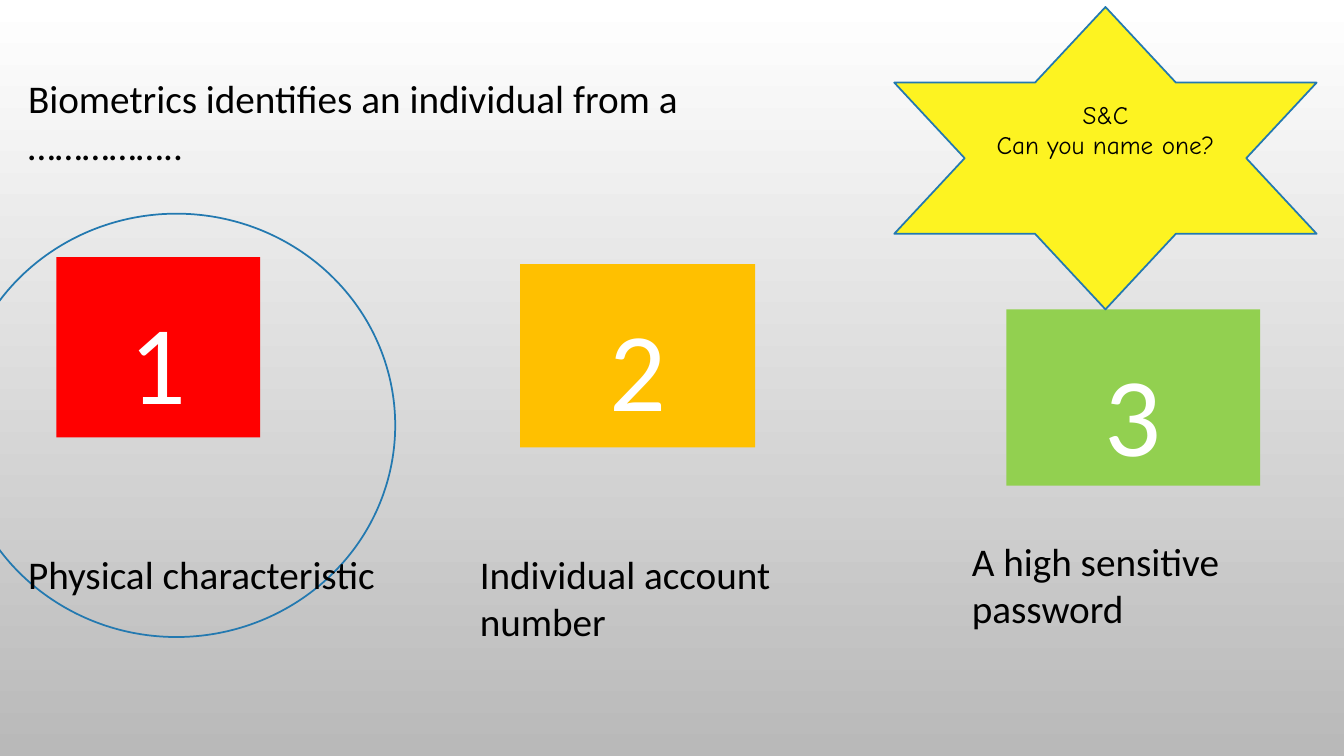
"""Build a quiz slide on biometrics with three numbered answers."""
from pptx import Presentation
from pptx.dml.color import RGBColor
from pptx.enum.shapes import MSO_SHAPE
from pptx.enum.text import MSO_ANCHOR, PP_ALIGN
from pptx.util import Inches, Pt

BLACK = RGBColor(0x00, 0x00, 0x00)
WHITE = RGBColor(0xFF, 0xFF, 0xFF)
GREY = RGBColor(0xB9, 0xB9, 0xB9)
RED = RGBColor(0xFF, 0x00, 0x00)
AMBER = RGBColor(0xFF, 0xC0, 0x00)
GREEN = RGBColor(0x92, 0xD0, 0x50)
YELLOW = RGBColor(0xFD, 0xF3, 0x21)
BLUE = RGBColor(0x23, 0x79, 0xB0)

deck = Presentation()
deck.slide_width, deck.slide_height = Inches(13.33), Inches(7.5)
slide = deck.slides.add_slide(deck.slide_layouts[6])

backdrop = slide.background.fill
backdrop.gradient()
backdrop.gradient_angle = 270
for stop, shade in zip(backdrop.gradient_stops, (WHITE, GREY)):
    stop.color.rgb = shade


def percent(left, top, width, height):
    """Turn percentages of the slide into lengths."""
    across, down = deck.slide_width / 100, deck.slide_height / 100
    return [int(n) for n in (left * across, top * down, width * across, height * down)]


def write(frame, text, size, color, font="Calibri", align=PP_ALIGN.LEFT):
    """Fill a text frame in one style."""
    frame.word_wrap = True
    frame.text = text
    for paragraph in frame.paragraphs:
        paragraph.alignment = align
        for run in paragraph.runs:
            run.font.name, run.font.size = font, Pt(size)
            run.font.color.rgb = color


answers = [
    ("1", RED, (4.2, 34, 15.15, 23.87)),
    ("2", AMBER, (38.71, 34.93, 17.48, 24.27)),
    ("3", GREEN, (74.87, 40.93, 18.9, 23.33)),
]
for number, color, area in answers:
    tile = slide.shapes.add_shape(MSO_SHAPE.RECTANGLE, *percent(*area))
    tile.shadow.inherit = False
    tile.fill.solid()
    tile.fill.fore_color.rgb = color
    tile.line.fill.background()
    tile.text_frame.vertical_anchor = MSO_ANCHOR.TOP
    tile.text_frame.margin_top = Inches(0.35)
    write(tile.text_frame, number, 80, WHITE, align=PP_ALIGN.CENTER)

ring = slide.shapes.add_shape(MSO_SHAPE.OVAL, *percent(-3.15, 28.27, 32.56, 56))
ring.fill.background()
star = slide.shapes.add_shape(MSO_SHAPE.STAR_6_POINT, *percent(66.54, 0.93, 31.43, 40))
star.fill.solid()
star.fill.fore_color.rgb = YELLOW
for outlined in (ring, star):
    outlined.shadow.inherit = False
    outlined.line.color.rgb = BLUE
    outlined.line.width = Pt(1.25)
star.text_frame.vertical_anchor = MSO_ANCHOR.MIDDLE
star.text_frame.margin_bottom = Inches(0.62)
write(star.text_frame, "S&C\nCan you name one?", 18, BLACK, "Comic Neue", PP_ALIGN.CENTER)

wordings = [
    ("Biometrics identifies an individual from a ……………..", (1.35, 9.2, 53.41, 13.87)),
    ("Physical characteristic", (1.35, 72.13, 27.31, 7.6)),
    ("Individual account number", (34.96, 72.13, 27.31, 13.87)),
    ("A high sensitive password", (71.57, 70.4, 27.31, 13.87)),
]
for wording, area in wordings:
    caption = slide.shapes.add_textbox(*percent(*area))
    write(caption.text_frame, wording, 28, BLACK)

deck.save("out.pptx")
